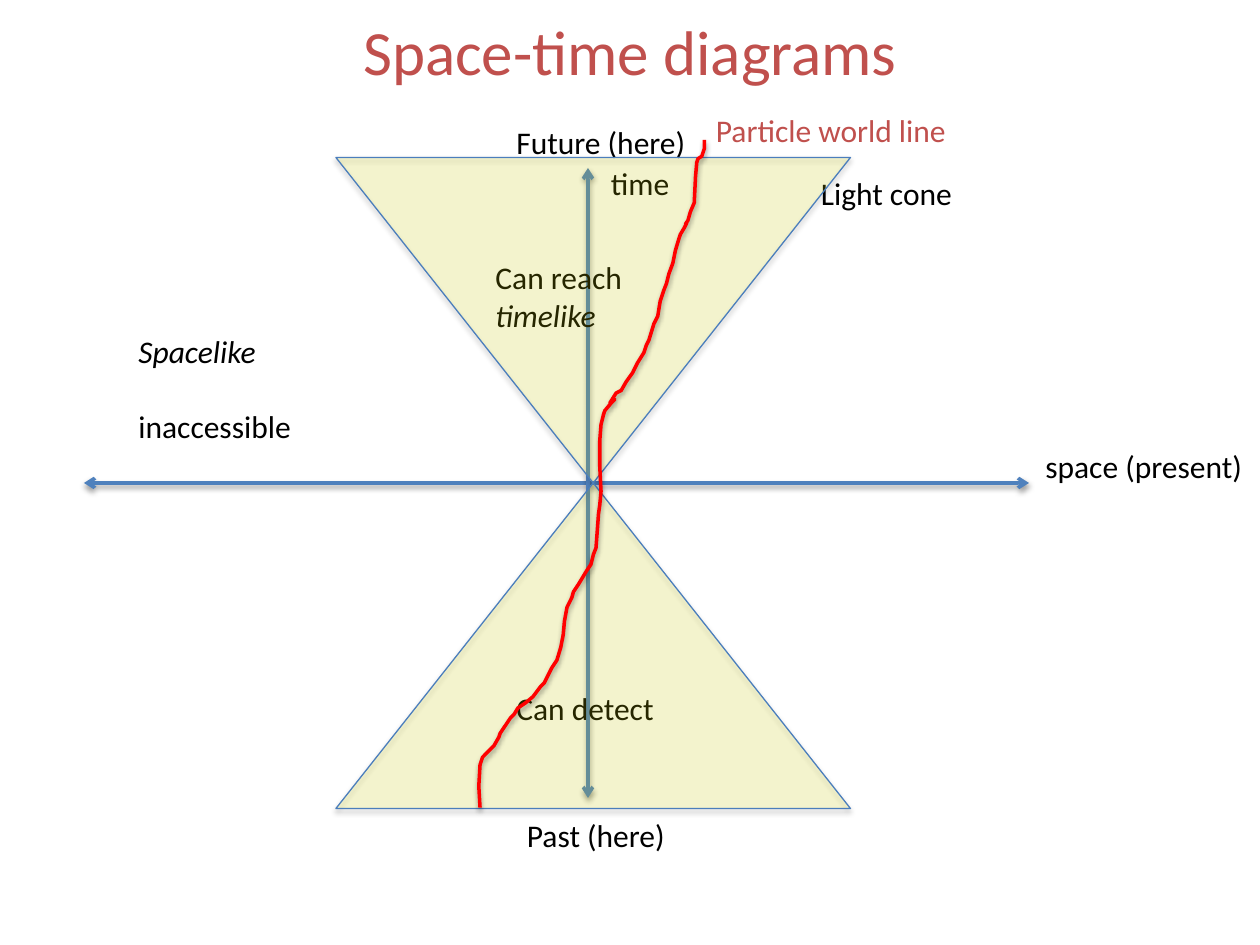
import pptx
import pptx.dml.color
import pptx.enum.shapes
import pptx.enum.text
import pptx.oxml
import pptx.oxml.ns
import pptx.util

Pt = pptx.util.Pt
RGBColor = pptx.dml.color.RGBColor

BLACK = RGBColor(0x00, 0x00, 0x00)
BRICK = RGBColor(0xC0, 0x50, 0x4D)
BLUE = RGBColor(0x4F, 0x81, 0xBD)
CONE_EDGE = RGBColor(0x4B, 0x7E, 0xBC)
YELLOW = RGBColor(0xFF, 0xFF, 0x00)
RED = RGBColor(0xFF, 0x00, 0x00)
FONT = "Calibri"

# Particle track from past to future, on a grid of 0.72 pt
GRID = Pt(0.72)
WORLD_LINE = [
    (381, 641), (380, 624), (381, 607), (383, 601), (386, 598), (392, 592),
    (396, 585), (397, 582), (401, 576), (405, 570), (408, 567), (411, 562),
    (417, 558), (423, 553), (429, 545), (432, 542), (438, 530), (442, 524),
    (445, 514), (447, 504), (448, 493), (450, 482), (454, 474), (455, 470),
    (459, 464), (465, 454), (469, 448), (471, 440), (473, 435), (474, 422),
    (475, 408), (476, 401), (477, 390), (476, 370), (476, 350), (477, 337),
    (479, 329), (480, 326), (485, 320), (488, 317), (484, 320), (489, 312),
    (493, 310), (497, 303), (502, 296), (506, 288), (511, 280), (513, 274),
    (515, 270), (519, 257), (522, 251), (524, 239), (527, 230), (529, 225),
    (531, 217), (534, 209), (536, 199), (539, 189), (540, 186), (543, 181),
    (545, 177), (544, 178), (546, 175), (548, 168), (551, 161), (552, 140),
    (553, 129), (554, 126), (557, 124), (559, 118), (559, 111),
]


def write_text(frame, lines, size=18, color=BLACK, italic_lines=(), align=None, gap=0):
    """Write one paragraph per line; gap is the space between them."""
    for index, line in enumerate(lines):
        para = frame.paragraphs[0] if index == 0 else frame.add_paragraph()
        para.alignment = align
        if index and gap:
            para.space_before = Pt(gap)
        span = para.add_run()
        span.text = line
        span.font.name = FONT
        span.font.size = Pt(size)
        span.font.color.rgb = color
        if line in italic_lines:
            span.font.italic = True


def add_label(page, left, top, width, *lines, height=29, indent=7.2, **text_format):
    box = page.shapes.add_textbox(Pt(left), Pt(top), Pt(width), Pt(height))
    box.text_frame.word_wrap = True
    box.text_frame.margin_left = Pt(indent)
    write_text(box.text_frame, lines, **text_format)


def add_shadow(shape, distance=1.6, alpha=38):
    shape._element.spPr.append(pptx.oxml.parse_xml(
        f'<a:effectLst {pptx.oxml.ns.nsdecls("a")}>'
        f'<a:outerShdw blurRad="{Pt(3.1)}" dist="{Pt(distance)}" dir="5400000" rotWithShape="0">'
        f'<a:srgbClr val="000000"><a:alpha val="{alpha * 1000}"/></a:srgbClr>'
        '</a:outerShdw></a:effectLst>'))


def set_line(shape, color, width):
    shape.line.color.rgb = color
    shape.line.width = Pt(width)


def add_axis(page, *ends):
    axis = page.shapes.add_connector(
        pptx.enum.shapes.MSO_CONNECTOR.STRAIGHT, *(Pt(value) for value in ends))
    set_line(axis, BLUE, 2)
    for tag in ("headEnd", "tailEnd"):
        axis.line._ln.append(pptx.oxml.parse_xml(
            f'<a:{tag} {pptx.oxml.ns.nsdecls("a")} type="arrow"/>'))
    add_shadow(axis)


def add_light_cone(page):
    cone = page.shapes.add_shape(
        pptx.enum.shapes.MSO_SHAPE.FLOWCHART_COLLATE, Pt(192), Pt(90), Pt(294), Pt(372))
    cone.fill.solid()
    cone.fill.fore_color.rgb = YELLOW
    color = cone._element.spPr.find(".//" + pptx.oxml.ns.qn("a:srgbClr"))
    color.append(pptx.oxml.parse_xml(
        f'<a:alpha {pptx.oxml.ns.nsdecls("a")} val="15000"/>'))
    set_line(cone, CONE_EDGE, 0.75)
    add_shadow(cone, distance=1.8, alpha=35)


def add_world_line(page):
    builder = page.shapes.build_freeform(*WORLD_LINE[0], scale=GRID)
    builder.add_line_segments(WORLD_LINE[1:], close=False)
    track = builder.convert_to_shape()
    track.fill.background()
    set_line(track, RED, 2)
    add_shadow(track)


def add_title(page, text):
    title = page.shapes.title
    title.left, title.top, title.width, title.height = Pt(36), Pt(6), Pt(648), Pt(45)
    title.text_frame.vertical_anchor = pptx.enum.text.MSO_ANCHOR.MIDDLE
    write_text(title.text_frame, [text], size=36, color=BRICK,
               align=pptx.enum.text.PP_ALIGN.CENTER)


def main():
    deck = pptx.Presentation()
    deck.slide_width, deck.slide_height = Pt(720), Pt(540)
    page = deck.slides.add_slide(deck.slide_layouts[5])
    add_title(page, "Space-time diagrams")

    # Axes and their labels
    add_axis(page, 48, 276, 588, 276)
    add_label(page, 582, 252, 162, "space (present)", indent=15.3)
    add_label(page, 288, 67, 162, "Future (here)")
    add_axis(page, 336, 96, 336, 456)
    add_label(page, 342, 90, 150, "time")
    add_label(page, 294, 463, 96, "Past (here)")

    # Regions, under the translucent cone
    add_label(page, 462, 96, 120, "Light cone")
    add_label(page, 276, 144, 120, "Can reach", "timelike", height=51,
              italic_lines=["timelike"])
    add_label(page, 288, 390, 102, "Can detect")
    add_label(page, 72, 186, 126, "Spacelike", "inaccessible", height=73,
              italic_lines=["Spacelike"], gap=21.6)
    add_light_cone(page)

    # Particle track
    add_world_line(page)
    add_label(page, 402, 60, 198, "Particle world line", color=BRICK)

    deck.save("out.pptx")


if __name__ == "__main__":
    main()
